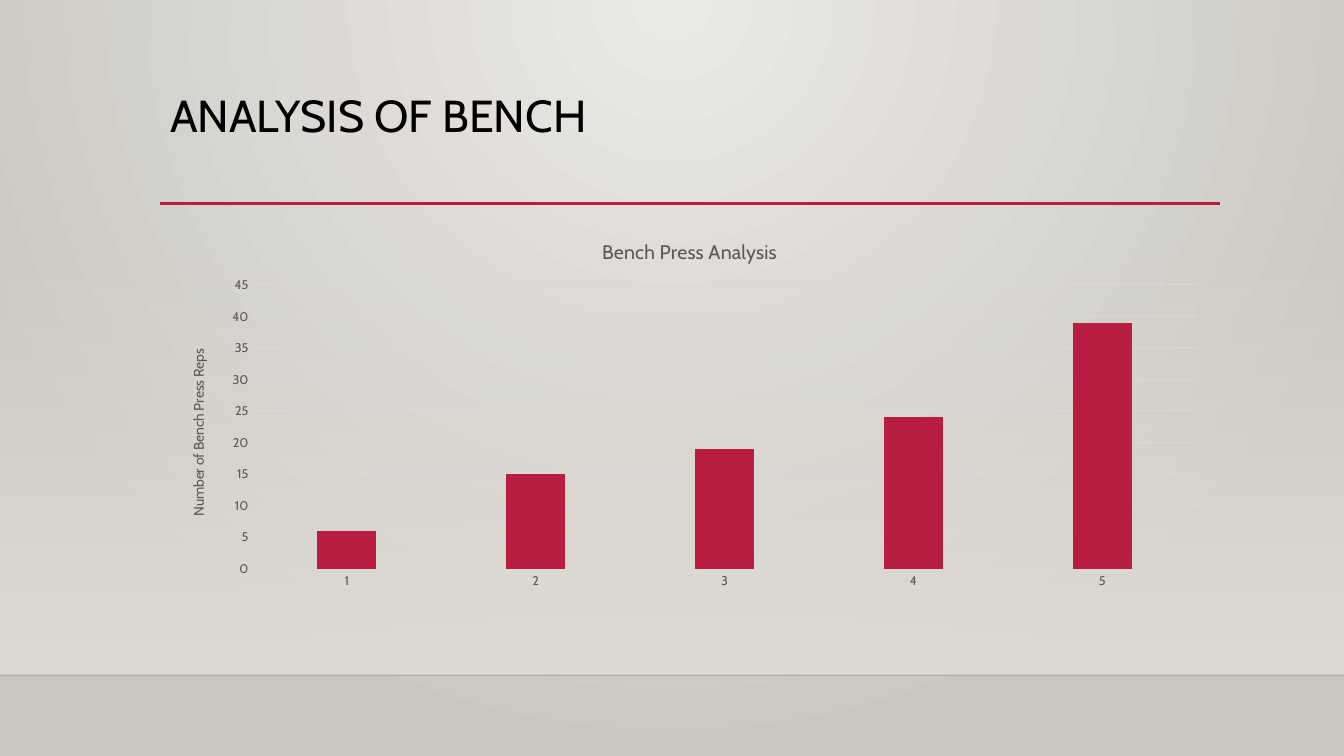
from lxml import etree
from pptx import Presentation
from pptx.chart.data import CategoryChartData
from pptx.dml.color import RGBColor
from pptx.enum import chart as ch, shapes, text
from pptx.oxml import parse_xml
from pptx.oxml.ns import nsdecls, qn
from pptx.util import Inches, Pt

TITLE = "ANALYSIS OF BENCH"
CHART_TITLE = "Bench Press Analysis"
AXIS_TITLE = "Number of Bench Press Reps"
REPS = {"1": 6, "2": 15, "3": 19, "4": 24, "5": 39}
PLOT = {"x": 0.087, "y": 0.166, "w": 0.892, "h": 0.747}
COLORS = {"accent": "B71E42", "title": "000000", "label": "595959", "grid": "D9D9D9",
          "center": "ECEAE7", "edge": "CAC7C1", "wall": "DFDBD5", "floor": "000001"}
FONT = "Cabin"
LEFT, WIDTH, SLIDE_W, FLOOR_Y = 1.59, 10.5, 13.33, 6.7


def rgb(name):
    return RGBColor.from_string(COLORS[name])


def gradient(start, end, shade, start_alpha=100):
    return parse_xml(
        f'<a:gradFill {nsdecls("a")} rotWithShape="1"><a:gsLst>'
        f'<a:gs pos="0"><a:srgbClr val="{COLORS[start]}">'
        f'<a:alpha val="{start_alpha * 1000}"/></a:srgbClr></a:gs>'
        f'<a:gs pos="100000"><a:srgbClr val="{COLORS[end]}"/></a:gs>'
        f'</a:gsLst>{shade}</a:gradFill>')


def set_gradient(fill, parent, grad):
    fill.gradient()
    old = parent.find(".//" + qn("a:gradFill"))
    old.getparent().replace(old, grad)


def style(font, size, color):
    font.name, font.size, font.bold = FONT, Pt(size), False
    font.color.rgb = rgb(color)


def add_line(s, x1, x2, y, color, width, alpha=100):
    ln = s.shapes.add_connector(shapes.MSO_CONNECTOR.STRAIGHT,
                                Inches(x1), Inches(y), Inches(x2), Inches(y))
    ln.line.color.rgb, ln.line.width = rgb(color), Pt(width)
    if alpha < 100:
        clr = ln._element.spPr.find(".//" + qn("a:srgbClr"))
        etree.SubElement(clr, qn("a:alpha")).set("val", str(alpha * 1000))
    etree.SubElement(ln._element.spPr, qn("a:effectLst"))


def add_backdrop(s):
    circle = '<a:path path="circle"><a:fillToRect l="43000" t="0" r="43000" b="100000"/></a:path>'
    set_gradient(s.background.fill, s._element, gradient("center", "edge", circle))
    wall = s.shapes.add_shape(shapes.MSO_SHAPE.RECTANGLE, 0, Inches(2.21),
                              Inches(SLIDE_W), Inches(FLOOR_Y - 2.21))
    wall.shadow.inherit = False
    wall.line.fill.background()
    down = '<a:lin ang="5400000" scaled="0"/>'
    set_gradient(wall.fill, wall._element, gradient("wall", "wall", down, 0))
    add_line(s, 0, SLIDE_W, FLOOR_Y, "floor", 1, 20)
    add_line(s, LEFT, 12.1, 2.02, "accent", 2.5)


def add_title(s):
    box = s.shapes.add_textbox(Inches(LEFT), Inches(0.88), Inches(WIDTH), Inches(1.15))
    tf = box.text_frame
    tf.word_wrap = True
    tf.vertical_anchor = text.MSO_ANCHOR.TOP
    p = tf.paragraphs[0]
    p.text, p.line_spacing = TITLE, 0.9
    style(p.font, 32, "title")


def set_chart_text(owner, words, size):
    p = owner.text_frame.paragraphs[0]
    p.text = words
    style(p.font, size, "label")


def add_reps_chart(s):
    data = CategoryChartData()
    data.categories = list(REPS)
    data.add_series("Series 1", list(REPS.values()))
    chart = s.shapes.add_chart(ch.XL_CHART_TYPE.COLUMN_CLUSTERED, Inches(LEFT), Inches(2.2),
                               Inches(WIDTH), Inches(3.77), data).chart
    style(chart.font, 10, "title")
    chart.has_legend = False
    chart.has_title = True
    set_chart_text(chart.chart_title, CHART_TITLE, 14)
    chart.chart_title.include_in_layout = False
    plot = chart.plots[0]
    plot.gap_width, plot.vary_by_categories = 219, False
    bars = plot.series[0].format.fill
    bars.solid()
    bars.fore_color.rgb = rgb("accent")

    cat, val = chart.category_axis, chart.value_axis
    for axis in (cat, val):
        style(axis.tick_labels.font, 9, "label")
        axis.major_tick_mark = axis.minor_tick_mark = ch.XL_TICK_MARK.NONE
    val.minimum_scale, val.maximum_scale, val.major_unit = 0, 45, 5
    val.has_major_gridlines = True
    val.format.line.fill.background()
    for line in (cat.format.line, val.major_gridlines.format.line):
        line.color.rgb, line.width = rgb("grid"), Pt(0.75)
    set_chart_text(val.axis_title, AXIS_TITLE, 10)

    area = chart._chartSpace.find(".//" + qn("c:plotArea"))
    for old in area.findall(qn("c:layout")):
        area.remove(old)
    sizes = "".join(f'<c:{k} val="{v}"/>' for k, v in PLOT.items())
    area.insert(0, parse_xml(
        f'<c:layout {nsdecls("c")}><c:manualLayout><c:layoutTarget val="inner"/>'
        f'<c:xMode val="edge"/><c:yMode val="edge"/>{sizes}</c:manualLayout></c:layout>'))


def main():
    """Build the bench press analysis slide."""
    prs = Presentation()
    prs.slide_width, prs.slide_height = Inches(SLIDE_W), Inches(7.5)
    s = prs.slides.add_slide(prs.slide_layouts[6])
    add_backdrop(s)
    add_title(s)
    add_reps_chart(s)
    prs.save("out.pptx")


if __name__ == "__main__":
    main()
